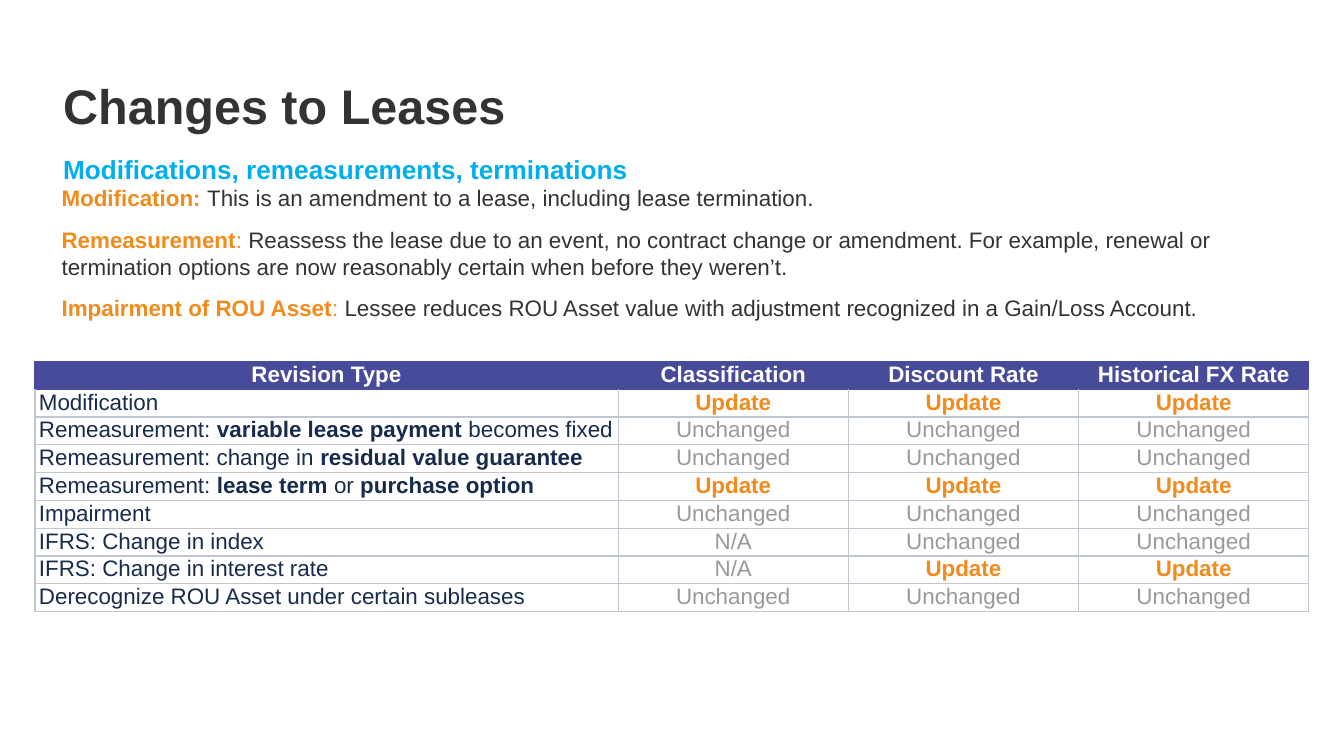
from dataclasses import dataclass

from lxml.etree import SubElement
from pptx import Presentation
from pptx.dml.color import RGBColor as RGB
from pptx.enum.text import MSO_ANCHOR as Anchor, PP_ALIGN as Align
from pptx.oxml.ns import qn
from pptx.util import Inches, Pt


@dataclass(frozen=True)
class Theme:
    font: str = "Arial"
    text: str = "333333"
    subtitle: str = "00AEEF"
    accent: str = "F18B1B"
    header: str = "484B9A"
    header_text: str = "FFFFFF"
    label: str = "172B4D"
    muted: str = "999999"
    grid: str = "C1C7D0"
    title_size: int = 26
    subtitle_size: int = 14
    body_size: int = 12
    border: float = 0.75


class SlideBuilder:
    def __init__(self, slide, theme):
        self.slide = slide
        self.theme = theme

    def style(self, paragraph, size, color=None, bold=None):
        font = paragraph.font
        font.name = self.theme.font
        font.size = Pt(size)
        font.bold = bold
        if color:
            font.color.rgb = RGB.from_string(color)

    def run(self, paragraph, text, color=None, bold=None):
        run = paragraph.add_run()
        run.text = text
        if bold is not None:
            run.font.bold = bold
        if color:
            run.font.color.rgb = RGB.from_string(color)

    def text_frame(self, box, inset):
        frame = self.slide.shapes.add_textbox(*map(Inches, box)).text_frame
        frame.word_wrap = True
        frame.vertical_anchor = Anchor.TOP
        frame.margin_left = frame.margin_right = Inches(inset)
        frame.margin_top = frame.margin_bottom = Inches(inset)
        return frame

    def heading(self, text, box, size, color, spacing):
        paragraph = self.text_frame(box, 0.05).paragraphs[0]
        paragraph.line_spacing = spacing
        self.run(paragraph, text)
        self.style(paragraph, size, color, True)

    def definitions(self, entries, box):
        frame = self.text_frame(box, 0.1)
        for index, (term, colon, meaning) in enumerate(entries):
            paragraph = frame.add_paragraph() if index else frame.paragraphs[0]
            if index:
                paragraph.space_before = Pt(8)
            self.style(paragraph, self.theme.body_size)
            self.run(paragraph, term, self.theme.accent, True)
            if colon:
                self.run(paragraph, colon, self.theme.accent, False)
            self.run(paragraph, meaning, self.theme.text, False)

    def borders(self, cell, color, top_color):
        properties = cell._tc.get_or_add_tcPr()
        for position, side in enumerate("LRTB"):
            line = SubElement(properties, qn(f"a:ln{side}"), w=str(Pt(self.theme.border)))
            fill = SubElement(line, qn("a:solidFill"))
            SubElement(fill, qn("a:srgbClr"), val=top_color if side == "T" else color)
            properties.insert(position, line)

    def cell(self, cell, text, color, bold=False, centered=True, header=False, top_color=None):
        theme = self.theme
        cell.margin_left = Inches(0.01 if centered else 0.03)
        cell.margin_right = Inches(0.01)
        cell.margin_top = cell.margin_bottom = Pt(0.25)
        if header:
            cell.fill.solid()
            cell.fill.fore_color.rgb = RGB.from_string(theme.header)
        else:
            cell.fill.background()
        line_color = theme.header if header else theme.grid
        self.borders(cell, line_color, top_color or line_color)
        paragraph = cell.text_frame.paragraphs[0]
        paragraph.alignment = Align.CENTER if centered else Align.LEFT
        self.style(paragraph, theme.body_size, color, bold)
        # Double asterisks enclose the bold parts of a label
        for index, part in enumerate(text.split("**")):
            if part:
                self.run(paragraph, part, bold=True if index % 2 else None)

    def table(self, header, rows, left, top, widths, row_height):
        theme = self.theme
        count = len(rows) + 1
        table = self.slide.shapes.add_table(
            count, len(header), Inches(left), Inches(top),
            Inches(sum(widths)), Inches(row_height * count)).table
        table.first_row = table.horz_banding = False
        for column, width in zip(table.columns, widths):
            column.width = Inches(width)
        for row in table.rows:
            row.height = Inches(row_height)
        for column, text in enumerate(header):
            self.cell(table.cell(0, column), text, theme.header_text, True, header=True)
        for row, (label, *values) in enumerate(rows, 1):
            top_color = theme.header if row == 1 else None
            self.cell(table.cell(row, 0), label, theme.label, centered=False, top_color=top_color)
            for column, value in enumerate(values, 1):
                update = value == UPDATE
                self.cell(table.cell(row, column), value,
                          theme.accent if update else theme.muted, update, top_color=top_color)


UPDATE, UNCHANGED, NOT_APPLICABLE = "Update", "Unchanged", "N/A"

DEFINITIONS = [
    ("Modification: ", "", "This is an amendment to a lease, including lease termination."),
    ("Remeasurement", ": ",
     "Reassess the lease due to an event, no contract change or amendment. For example, "
     "renewal or termination options are now reasonably certain when before they weren’t."),
    ("Impairment of ROU Asset", ": ",
     "Lessee reduces ROU Asset value with adjustment recognized in a Gain/Loss Account."),
]

HEADER = ["Revision Type", "Classification", "Discount Rate", "Historical FX Rate"]
REVISIONS = [
    ("Modification", UPDATE, UPDATE, UPDATE),
    ("Remeasurement: **variable lease payment** becomes fixed", UNCHANGED, UNCHANGED, UNCHANGED),
    ("Remeasurement: change in **residual value guarantee**", UNCHANGED, UNCHANGED, UNCHANGED),
    ("Remeasurement: **lease term** or **purchase option**", UPDATE, UPDATE, UPDATE),
    ("Impairment", UNCHANGED, UNCHANGED, UNCHANGED),
    ("IFRS: Change in index", NOT_APPLICABLE, UNCHANGED, UNCHANGED),
    ("IFRS: Change in interest rate", NOT_APPLICABLE, UPDATE, UPDATE),
    ("Derecognize ROU Asset under certain subleases", UNCHANGED, UNCHANGED, UNCHANGED),
]


def main():
    presentation = Presentation()
    # Widescreen, 16:9
    presentation.slide_width = Inches(10)
    presentation.slide_height = presentation.slide_width * 9 // 16
    theme = Theme()
    builder = SlideBuilder(presentation.slides.add_slide(presentation.slide_layouts[6]), theme)

    # Headings
    builder.heading("Changes to Leases", (0.42, 0.45, 9, 0.55),
                    theme.title_size, theme.text, 1.15)
    builder.heading("Modifications, remeasurements, terminations", (0.42, 1, 8.96, 0.34),
                    theme.subtitle_size, theme.subtitle, 1.4)

    # Revision table
    label_width = 4.34
    value_width = (9.48 - label_width) / 3
    builder.table(HEADER, REVISIONS, 0.26, 2.69, [label_width] + [value_width] * 3, 0.2)

    # Definitions
    builder.definitions(DEFINITIONS, (0.36, 1.27, 9.32, 1.36))

    presentation.save("out.pptx")


if __name__ == "__main__":
    main()
